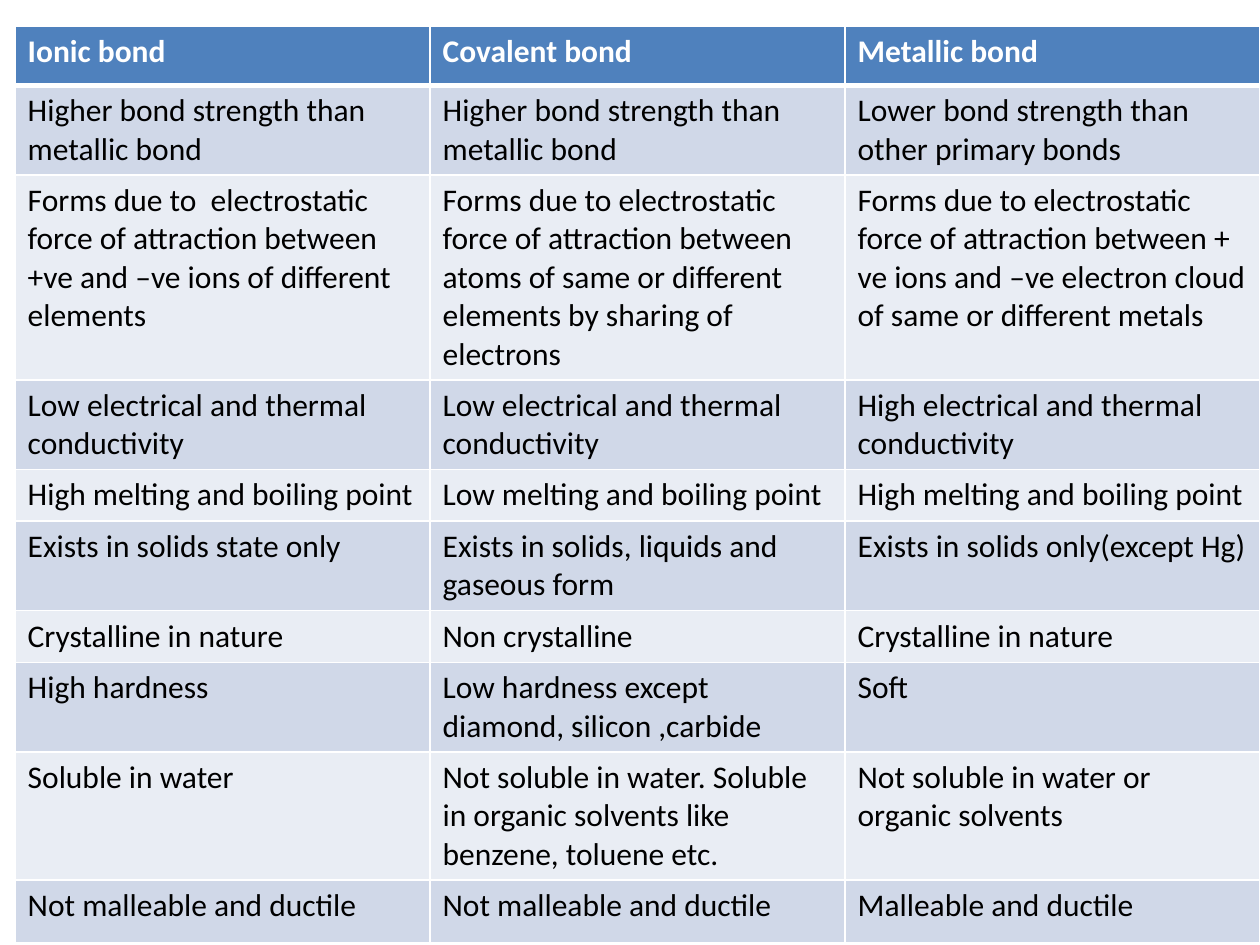
import pptx
import pptx.util
import pptx.dml.color
import pptx.oxml.ns
import lxml.etree

Inches = pptx.util.Inches
Pt = pptx.util.Pt
RGB = pptx.dml.color.RGBColor

BLUE = RGB(0x4F, 0x81, 0xBD)
BANDS = [RGB(0xE9, 0xED, 0xF4), RGB(0xD0, 0xD8, 0xE8)]
WHITE = RGB(0xFF, 0xFF, 0xFF)
BLACK = RGB(0, 0, 0)

ROWS = [
    (0.47, "Ionic bond", "Covalent bond", "Metallic bond"),
    (0.41, "Higher bond strength than metallic bond",
     "Higher bond strength than metallic bond",
     "Lower bond strength than other primary bonds"),
    (0.41, "Forms due to  electrostatic force of attraction between "
     "+ve and –ve ions of different elements",
     "Forms due to electrostatic force of attraction between atoms "
     "of same or different elements by sharing of electrons",
     "Forms due to electrostatic force of attraction between "
     "+ ve ions and –ve electron cloud of same or different metals"),
    (0.41, "Low electrical and thermal conductivity",
     "Low electrical and thermal conductivity",
     "High electrical and thermal conductivity"),
    (0.41, "High melting and boiling point",
     "Low melting and boiling point",
     "High melting and boiling point"),
    (0.41, "Exists in solids state only",
     "Exists in solids, liquids and gaseous form",
     "Exists in solids only(except Hg)"),
    (0.41, "Crystalline in nature", "Non crystalline",
     "Crystalline in nature"),
    (0.2, "High hardness",
     "Low hardness except diamond, silicon ,carbide", "Soft"),
    (1, "Soluble in water",
     "Not soluble in water. Soluble in organic solvents like "
     "benzene, toluene etc.",
     "Not soluble in water or organic solvents"),
    (0.5, "Not malleable and ductile", "Not malleable and ductile",
     "Malleable and ductile"),
]


def edge(cell, side, width):
    qn = pptx.oxml.ns.qn
    props = cell._tc.get_or_add_tcPr()
    line = lxml.etree.SubElement(props, qn("a:ln" + side), w=str(Pt(width)))
    fill = lxml.etree.SubElement(line, qn("a:solidFill"))
    lxml.etree.SubElement(fill, qn("a:srgbClr"), val=str(WHITE))


def put_cell(cell, text, row):
    head = row == 0
    for side in "LRTB":
        thick = (row == 0 and side == "B") or (row == 1 and side == "T")
        edge(cell, side, 3 if thick else 1)
    cell.fill.solid()
    cell.fill.fore_color.rgb = BLUE if head else BANDS[row % 2]
    run = cell.text_frame.paragraphs[0].add_run()
    run.text = text
    run.font.name = "Calibri"
    run.font.size = Pt(18)
    run.font.bold = head
    run.font.color.rgb = WHITE if head else BLACK


def bond_table(slide, left, top, width, height):
    count = len(ROWS[0]) - 1
    table = slide.shapes.add_table(
        len(ROWS), count, left, top, width, height).table
    for col in table.columns:
        col.width = int(width / count)
    for row, (tall, *texts) in enumerate(ROWS):
        table.rows[row].height = Inches(tall)
        for col, text in enumerate(texts):
            put_cell(table.cell(row, col), text, row)


def main():
    deck = pptx.Presentation()
    deck.slide_width = Inches(10)
    deck.slide_height = Inches(7.5)
    slide = deck.slides.add_slide(deck.slide_layouts[6])
    bond_table(slide, Inches(0.12), Inches(0.21), Inches(9.88), Inches(7.18))
    deck.save("out.pptx")


if __name__ == "__main__":
    main()
